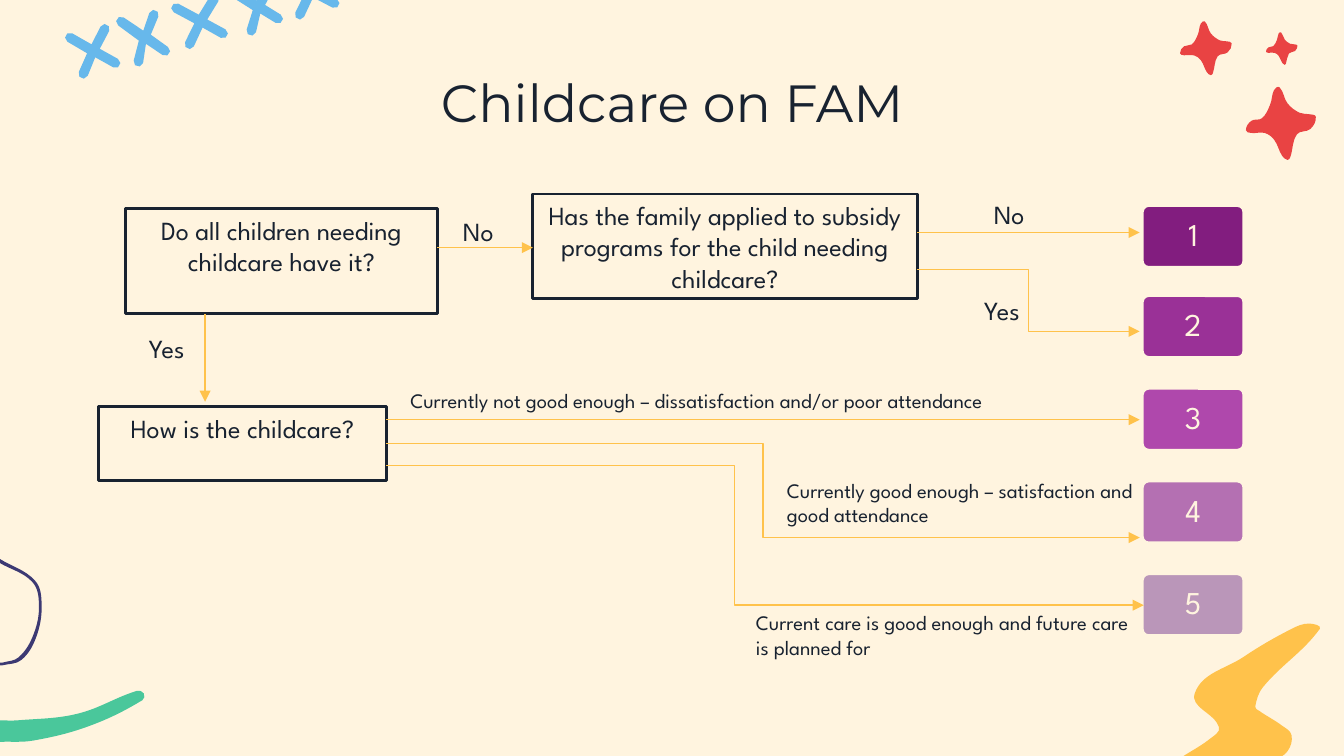
from math import atan2, cos, pi, sin

from lxml.etree import SubElement
from pptx import Presentation
from pptx.dml.color import RGBColor
from pptx.enum.shapes import MSO_CONNECTOR, MSO_SHAPE
from pptx.enum.text import MSO_ANCHOR, PP_ALIGN
from pptx.oxml.ns import qn
from pptx.util import Inches, Pt

COLORS = {
    "cream": "FFF4DF", "ink": "182230", "gold": "FFC24B", "red": "E94343",
    "green": "4AC79B", "navy": "3C3973", "sky": "67B8EB",
}
LEVELS = [(15.3, "821D7F"), (22, "9A3197"), (28.9, "AF48AC"), (35.8, "B470B2"), (42.7, "BA96B9")]
BODY = "League Spartan"


def curve(drawing, contour):
    outline = next(drawing._element.iter(qn("a:path")))
    for segment in outline.findall(qn("a:lnTo")):
        outline.remove(segment)
    close = outline.find(qn("a:close"))
    outline.remove(close)
    knots = [complex(x - drawing.left, y - drawing.top) for x, y in contour]
    count = len(knots)
    for i in range(count):
        before, start, end, after = (knots[(i + j) % count] for j in (-1, 0, 1, 2))
        reach = abs(end - start) * 0.36
        leave = start + reach * (end - before) / abs(end - before)
        arrive = end - reach * (after - start) / abs(after - start)
        bezier = SubElement(outline, qn("a:cubicBezTo"))
        for point in (leave, arrive, end):
            SubElement(bezier, qn("a:pt"), x=str(round(point.real)), y=str(round(point.imag)))
    outline.append(close)


def write(box, text, size, align=PP_ALIGN.CENTER, color="ink", font=BODY, anchor=MSO_ANCHOR.TOP):
    frame = box.text_frame
    frame.word_wrap = True
    frame.vertical_anchor = anchor
    frame.margin_left = frame.margin_right = Inches(0.07)
    frame.margin_top = frame.margin_bottom = Inches(0.04)
    frame.text = text
    para = frame.paragraphs[0]
    para.alignment = align
    para.font.size = Pt(size)
    para.font.name = font
    para.font.color.rgb = RGBColor.from_string(COLORS[color])
    return para


deck = Presentation()
deck.slide_width, deck.slide_height = Inches(10), Inches(5.625)
cell = deck.slide_width // 100
page = deck.slides.add_slide(deck.slide_layouts[5])
page.background.fill.solid()
page.background.fill.fore_color.rgb = RGBColor.from_string(COLORS["cream"])

star = [(2.5, 0), (2.1, 0.2), (1.8, 1.3), (1.2, 2.3), (0.4, 2.5), (0, 3.2), (0.4, 3.4),
        (1.4, 3.4), (2.1, 3.9), (2.7, 5.1), (3.1, 5.4), (3.3, 5.2), (3.8, 3.5), (4.8, 3.1),
        (5.2, 2.2), (4.7, 2), (4, 1.9), (3.1, 1.2)]
swoosh = [(0, 53.6), (0, 53.6), (1.3, 53.6), (5.8, 53.1), (10.2, 51.4),
          (10.7, 51.6), (10.6, 52.1), (6.7, 54), (2.5, 55.1), (0, 55.2), (0, 55.2)]
loop = [(0, 41.6), (0, 41.6), (2.6, 43.2), (3.1, 45), (2.7, 47.4), (1.6, 49.1),
        (0.2, 49.5), (0, 49.5), (0, 49.5), (0, 49.3), (0, 49.3), (0.2, 49.3), (1.4, 48.9),
        (2.5, 47.2), (2.9, 45), (2.4, 43.3), (0, 41.9), (0, 41.9)]
bolt = [(97.4, 46.4), (96.1, 46.8), (92.5, 48.9), (88.9, 51.6), (90.7, 54.1),
        (90, 55), (87.3, 56.8), (85.9, 58.3), (86.2, 60.1), (87.9, 60.9), (88.1, 61.4), (88.1, 61.4),
        (93.3, 61.4), (93.3, 61.4), (92.5, 60.6), (92, 60), (92.4, 58.7), (94.7, 56.7), (95.8, 55.9),
        (96.1, 54.7), (95.4, 54), (93.7, 52.9), (93.4, 52.6), (94, 51.1), (98.2, 46.8)]
cross_tips = [
    [(7.8, 2.15), (8.6, 4.7), (6.2, 5.5), (5.2, 2.8)],
    [(11.45, 1.1), (12.3, 3.8), (10.3, 4.6), (9, 1.6)],
    [(15.95, -0.1), (16.6, 2.5), (14.1, 3.3), (13.1, 0.6)],
    [(20.1, -1.1), (20.7, 1.4), (18.7, 2.3), (17.5, -0.5)],
    [(24, -2.2), (24.9, 0.25), (22.3, 1.1), (21.4, -1.8)],
]
crosses = []
for tips in cross_tips:
    middle = [sum(axis) / 4 for axis in zip(*tips)]
    angles = [atan2(y - middle[1], x - middle[0]) for x, y in tips]
    outline = []
    for (x, y), angle in zip(tips, angles):
        for turn in (-3, -1, 1, 3):
            outline.append((x + 0.36 * cos(angle + turn * pi / 6), y + 0.36 * sin(angle + turn * pi / 6)))
        outline.append((middle[0] + 0.5 * cos(angle + pi / 4), middle[1] + 0.5 * sin(angle + pi / 4)))
    crosses.append(outline)

art = [([[(left + x * share, top + y * share) for x, y in star]], "red")
       for left, top, share in [(92.7, 6.5, 1), (87.8, 1.6, 0.74), (94.2, 2.4, 0.45)]]
art += [([swoosh], "green"), ([loop], "navy"), ([bolt], "gold"), (crosses, "sky")]
for contours, color in art:
    scaled = [[(x * cell, y * cell) for x, y in contour] for contour in contours]
    builder = page.shapes.build_freeform(*scaled[0][0])
    builder.add_line_segments(scaled[0][1:])
    for contour in scaled[1:]:
        builder.move_to(*contour[0])
        builder.add_line_segments(contour[1:])
    drawing = builder.convert_to_shape()
    if len(scaled) == 1:
        curve(drawing, scaled[0])
    drawing.shadow.inherit = False
    drawing.fill.solid()
    drawing.fill.fore_color.rgb = RGBColor.from_string(COLORS[color])
    drawing.line.fill.background()

title = page.shapes.title
title.left, title.top, title.width, title.height = (int(n * cell) for n in (13.8, 4.65, 72.4, 5.8))
write(title, "Childcare on FAM", 28, font="Montserrat", anchor=MSO_ANCHOR.MIDDLE)

boxes = [(MSO_SHAPE.ROUNDED_RECTANGLE, (85, top, 7.55, 4.6), str(number), level, "cream")
         for number, (top, level) in enumerate(LEVELS, 1)]
boxes += [(MSO_SHAPE.RECTANGLE, area, text, COLORS["cream"], "ink") for area, text in [
    ((9.35, 15.52, 23.2, 7.83), "Do all children needing childcare have it?"),
    ((39.65, 14.44, 28.6, 7.8), "Has the family applied to subsidy programs for the child needing childcare?"),
    ((7.35, 30.25, 21.4, 5.5), "How is the childcare?"),
]]
for kind, area, text, fill, line in boxes:
    box = page.shapes.add_shape(kind, *(int(n * cell) for n in area))
    box.shadow.inherit = False
    box.fill.solid()
    box.fill.fore_color.rgb = RGBColor.from_string(fill)
    box.line.color.rgb = RGBColor.from_string(COLORS[line])
    box.line.width = Pt(1.5)
    if kind == MSO_SHAPE.ROUNDED_RECTANGLE:
        box.adjustments[0] = 0.1
        write(box, text, 17, color="cream", anchor=MSO_ANCHOR.MIDDLE).line_spacing = 0.9
    else:
        write(box, text, 14)

arrows = [
    (15.26, 23.35, 15.26, 29.9, None), (32.55, 18.43, 39.65, 18.43, None),
    (68.25, 17.3, 84.8, 17.3, None), (68.25, 20.04, 84.8, 24.66, 50000),
    (28.75, 31.23, 84.8, 31.23, None), (28.75, 33, 84.8, 40, 50000),
    (28.75, 34.66, 85.1, 45.03, 46000),
]
for *ends, bend in arrows:
    kind = MSO_CONNECTOR.ELBOW if bend else MSO_CONNECTOR.STRAIGHT
    arrow = page.shapes.add_connector(kind, *(int(n * cell) for n in ends))
    arrow.line.color.rgb = RGBColor.from_string(COLORS["gold"])
    arrow.line.width = Pt(0.75)
    SubElement(arrow.line._get_or_add_ln(), qn("a:tailEnd"), type="triangle")
    properties = arrow._element.spPr
    SubElement(properties, qn("a:effectLst"))
    if bend:
        guides = properties.find(qn("a:prstGeom")).get_or_add_avLst()
        SubElement(guides, qn("a:gd"), name="adj1", fmla=f"val {bend}")

labels = [
    ((33.75, 15.6, 4.3, 3.1), "No", 14, PP_ALIGN.LEFT),
    ((9.4, 24.35, 6, 3.1), "Yes", 14, PP_ALIGN.CENTER),
    ((73.25, 14.35, 4.3, 3.1), "No", 14, PP_ALIGN.LEFT),
    ((71.55, 21.5, 6, 3.1), "Yes", 14, PP_ALIGN.CENTER),
    ((29.83, 28.5, 55.2, 2.6), "Currently not good enough – dissatisfaction and/or poor attendance", 11, PP_ALIGN.LEFT),
    ((57.85, 35.15, 27.4, 4.5), "Currently good enough – satisfaction and good attendance", 11, PP_ALIGN.LEFT),
    ((55.55, 45, 30.3, 4.5), "Current care is good enough and future care is planned for", 11, PP_ALIGN.LEFT),
]
for area, text, size, align in labels:
    write(page.shapes.add_textbox(*(int(n * cell) for n in area)), text, size, align)

deck.save("out.pptx")
